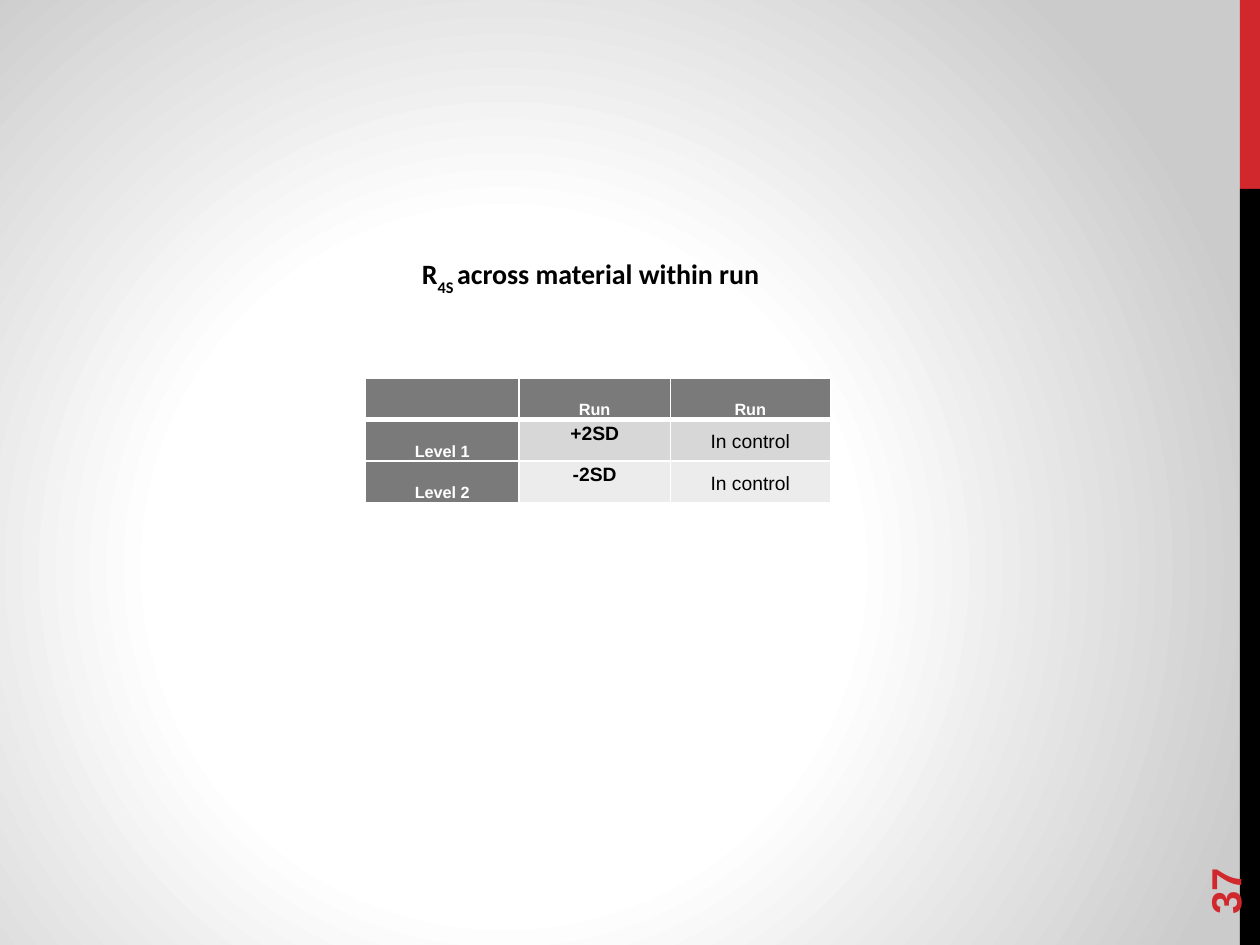
from pptx import Presentation
from pptx.dml.color import RGBColor
from pptx.enum.shapes import MSO_SHAPE as Shape
from pptx.enum.text import MSO_ANCHOR as Anchor, MSO_AUTO_SIZE as AutoSize, PP_ALIGN as Align
from pptx.oxml import parse_xml
from pptx.util import Inches, Pt

WIDTH, HEIGHT = Inches(10), Inches(7.5)
RED = RGBColor(0xD1, 0x28, 0x2E)
BLACK = RGBColor(0, 0, 0)
WHITE = RGBColor(255, 255, 255)
SILVER = RGBColor(0xCB, 0xCB, 0xCB)
HEADER = RGBColor(0x7A, 0x7A, 0x7A)
BANDS = [RGBColor(0xD7, 0xD7, 0xD7), RGBColor(0xEC, 0xEC, 0xEC)]
NS = 'xmlns:a="http://schemas.openxmlformats.org/drawingml/2006/main"'
ROWS = [["", "Run", "Run"],
        ["Level 1", "+2SD", "In control"],
        ["Level 2", "-2SD", "In control"]]
COLUMNS = [1.22, 1.2, 1.27]
ROW_HEIGHT = 0.33


def add_text(para, text, size=16, font="Arial", color=BLACK, bold=True, baseline=0):
    """Add one formatted span to a paragraph."""
    span = para.add_run()
    span.text = text
    span.font.size, span.font.name, span.font.bold = Pt(size), font, bold
    span.font.color.rgb = color
    if baseline:
        span.font._element.set("baseline", str(baseline * 1000))


def paint_background(page):
    """Fill the page with a circular white-to-silver gradient."""
    page.background.fill.solid()
    holder = page.background._cSld.bg.bgPr
    stops = "".join(f'<a:gs pos="{share * 1000}"><a:srgbClr val="{color}"/></a:gs>'
                    for share, color in [(0, WHITE), (44, WHITE), (100, SILVER)])
    holder.replace(holder[0], parse_xml(
        f'<a:gradFill {NS} rotWithShape="1"><a:gsLst>{stops}</a:gsLst><a:path path="circle">'
        '<a:fillToRect l="40000" t="60000" r="60000" b="40000"/></a:path></a:gradFill>'))


def add_side_bar(page, left, top, width, height):
    """Stack a red fifth on a black remainder."""
    for start, share, color in [(0, 0.2, RED), (0.2, 0.8, BLACK)]:
        bar = page.shapes.add_shape(Shape.RECTANGLE, left, top + int(height * start),
                                    width, int(height * share))
        bar.shadow.inherit = False
        bar.fill.solid()
        bar.fill.fore_color.rgb = color
        bar.line.fill.background()


def add_heading(page, left, top, width, height):
    """Write the rule name with its subscript."""
    box = page.shapes.add_textbox(left, top, width, height)
    box.text_frame.word_wrap = False
    box.text_frame.auto_size = AutoSize.SHAPE_TO_FIT_TEXT
    para = box.text_frame.paragraphs[0]
    for text, baseline in [("R", 0), ("4S ", -30), ("across material within run", 0)]:
        add_text(para, text, font="Calibri", baseline=baseline)


def add_page_number(page, left, top, width, height):
    """Write the page number, reading upwards."""
    box = page.shapes.add_textbox(left, top, width, height)
    box.rotation = 270
    box.text_frame.word_wrap = True
    box.text_frame.vertical_anchor = Anchor.MIDDLE
    add_text(box.text_frame.paragraphs[0], "37", size=24, color=RED)


def set_borders(cell, row):
    """Rule a cell in white, thicker below the header row."""
    heavy = {(0, "B"), (1, "T")}
    for side in "LRTB":
        points = 3 if (row, side) in heavy else 1
        cell._tc.get_or_add_tcPr().append(parse_xml(
            f'<a:ln{side} {NS} w="{Pt(points)}"><a:solidFill>'
            f'<a:srgbClr val="{WHITE}"/></a:solidFill></a:ln{side}>'))


def fill_cell(cell, text, row, column):
    """Format a cell by its place in the table."""
    heading = row == 0 or column == 0
    set_borders(cell, row)
    cell.fill.solid()
    cell.fill.fore_color.rgb = HEADER if heading else BANDS[row - 1]
    cell.margin_left = cell.margin_right = Inches(0.07)
    cell.margin_top = cell.margin_bottom = 0
    cell.vertical_anchor = Anchor.MIDDLE if column == 2 else Anchor.TOP
    para = cell.text_frame.paragraphs[0]
    para.alignment, para.line_spacing = Align.CENTER, 1.15
    if text and heading:
        add_text(para, text, color=WHITE, baseline=-25)
    elif text:
        add_text(para, text, size=11, bold=column == 1)


def add_control_table(page, left, top, width, height):
    """Place the table of runs by control level."""
    table = page.shapes.add_table(len(ROWS), len(COLUMNS), left, top, width, height).table
    table.first_row = table.horz_banding = False
    for column, share in zip(table.columns, COLUMNS):
        column.width = int(width * share / sum(COLUMNS))
    for row, texts in enumerate(ROWS):
        table.rows[row].height = height // len(ROWS)
        for column, text in enumerate(texts):
            fill_cell(table.cell(row, column), text, row, column)


def main():
    """Build and save the deck."""
    deck = Presentation()
    deck.slide_width, deck.slide_height = WIDTH, HEIGHT
    page = deck.slides.add_slide(deck.slide_layouts[6])
    paint_background(page)
    bar_left = int(WIDTH * 0.984)
    add_side_bar(page, bar_left, 0, WIDTH - bar_left, HEIGHT)
    add_control_table(page, int(WIDTH * 0.29), int(HEIGHT * 0.4),
                      Inches(sum(COLUMNS)), Inches(ROW_HEIGHT * len(ROWS)))
    add_page_number(page, int(WIDTH * 0.9), Inches(6.44), Inches(1.44), Inches(0.4))
    add_heading(page, Inches(3.25), Inches(1.99), Inches(2.94), Inches(0.37))
    deck.save("out.pptx")


if __name__ == "__main__":
    main()
